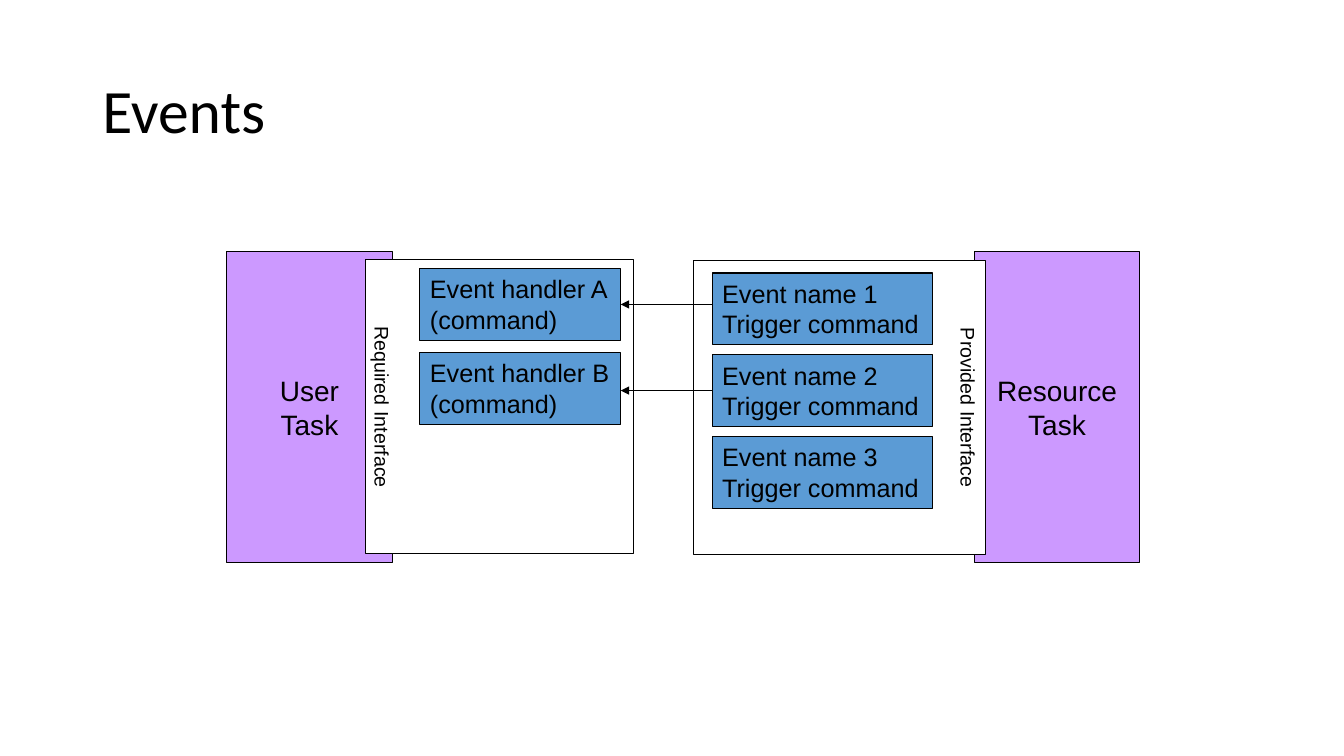
from lxml.etree import SubElement
from pptx import Presentation
from pptx.dml.color import RGBColor
from pptx.enum.shapes import MSO_CONNECTOR, MSO_SHAPE
from pptx.enum.text import MSO_ANCHOR, PP_ALIGN
from pptx.oxml.ns import qn
from pptx.util import Inches, Pt

# Grid of 160 columns by 90 rows; every cell is a square of 1/12 inch.
COLUMNS, ROWS = 160, 90
CELL = Inches(1) // 12
LINE_WIDTH = Pt(0.75)
BLACK, WHITE, PURPLE, BLUE = "000000", "FFFFFF", "CC99FF", "5B9BD5"


def paint(color_format, color):
    color_format.rgb = RGBColor.from_string(color)


def add_box(place, lines, fill, size, align, anchor, rotation=0):
    """Add an outlined rectangle; place is left, top, width, height in cells."""
    box = slide.shapes.add_shape(
        MSO_SHAPE.RECTANGLE, *(round(cells * CELL) for cells in place))
    box.shadow.inherit = False
    box.rotation = rotation
    box.fill.solid()
    paint(box.fill.fore_color, fill)
    paint(box.line.color, BLACK)
    box.line.width = LINE_WIDTH
    frame = box.text_frame
    frame.word_wrap = True
    frame.vertical_anchor = anchor
    frame.text = "\n".join(lines)
    for paragraph in frame.paragraphs:
        paragraph.alignment = align
        for name, value in {"name": "Arial", "size": Pt(size)}.items():
            setattr(paragraph.font, name, value)
        paint(paragraph.font.color, BLACK)
    return box


prs = Presentation()
prs.slide_width = COLUMNS * CELL
prs.slide_height = ROWS * CELL
slide = prs.slides.add_slide(prs.slide_layouts[6])

# Heading
heading = slide.shapes.add_textbox(
    *(round(cells * CELL) for cells in (11, 4.8, 138, 17.4))).text_frame
heading.word_wrap = True
heading.vertical_anchor = MSO_ANCHOR.MIDDLE
heading.text = "Events"
heading_line = heading.paragraphs[0]
heading_line.line_spacing = 0.9
for name, value in {"name": "Calibri", "size": Pt(44)}.items():
    setattr(heading_line.font, name, value)
paint(heading_line.font.color, BLACK)

# Tasks, each partly covered by its interface, which is turned on its side
sides = [
    (116, "Resource", "Provided Interface", (82.44, 31.2, 35, 34.7), MSO_ANCHOR.TOP),
    (27, "User", "Required Interface", (42, 32.5, 35, 31.9), MSO_ANCHOR.BOTTOM),
]
for task_left, owner, interface, interface_place, anchor in sides:
    add_box((task_left, 30, 19.7, 37), [owner, "Task"], PURPLE, 20,
            PP_ALIGN.CENTER, MSO_ANCHOR.MIDDLE)
    add_box(interface_place, [interface], WHITE, 14,
            PP_ALIGN.CENTER, anchor, rotation=90)

# Event and handler stacks: left, top, width and pitch in cells
stacks = [
    (84.8, 32.5, 26.2, 9.75, "Trigger command",
     ["Event name 1", "Event name 2", "Event name 3"]),
    (50, 32, 23.9, 10, "(command)", ["Event handler A", "Event handler B"]),
]
events, handlers = [
    [add_box((left, top + row * pitch, width, 8.5), [label, command], BLUE, 18,
             PP_ALIGN.JUSTIFY, MSO_ANCHOR.TOP)
     for row, label in enumerate(labels)]
    for left, top, width, pitch, command, labels in stacks
]

# Level arrows: the first runs at the handler's middle, the second at the event's
for event, handler, level in zip(events, handlers, (handlers[0], events[1])):
    y = level.top + level.height // 2
    arrow = slide.shapes.add_connector(
        MSO_CONNECTOR.STRAIGHT, event.left, y, handler.left + handler.width, y)
    if level is event:
        arrow.begin_connect(event, 1)
    else:
        arrow.end_connect(handler, 3)
    paint(arrow.line.color, BLACK)
    arrow.line.width = LINE_WIDTH
    SubElement(arrow.line._get_or_add_ln(), qn("a:tailEnd"), type="triangle")
    SubElement(arrow._element.spPr, qn("a:effectLst"))

prs.save("out.pptx")
